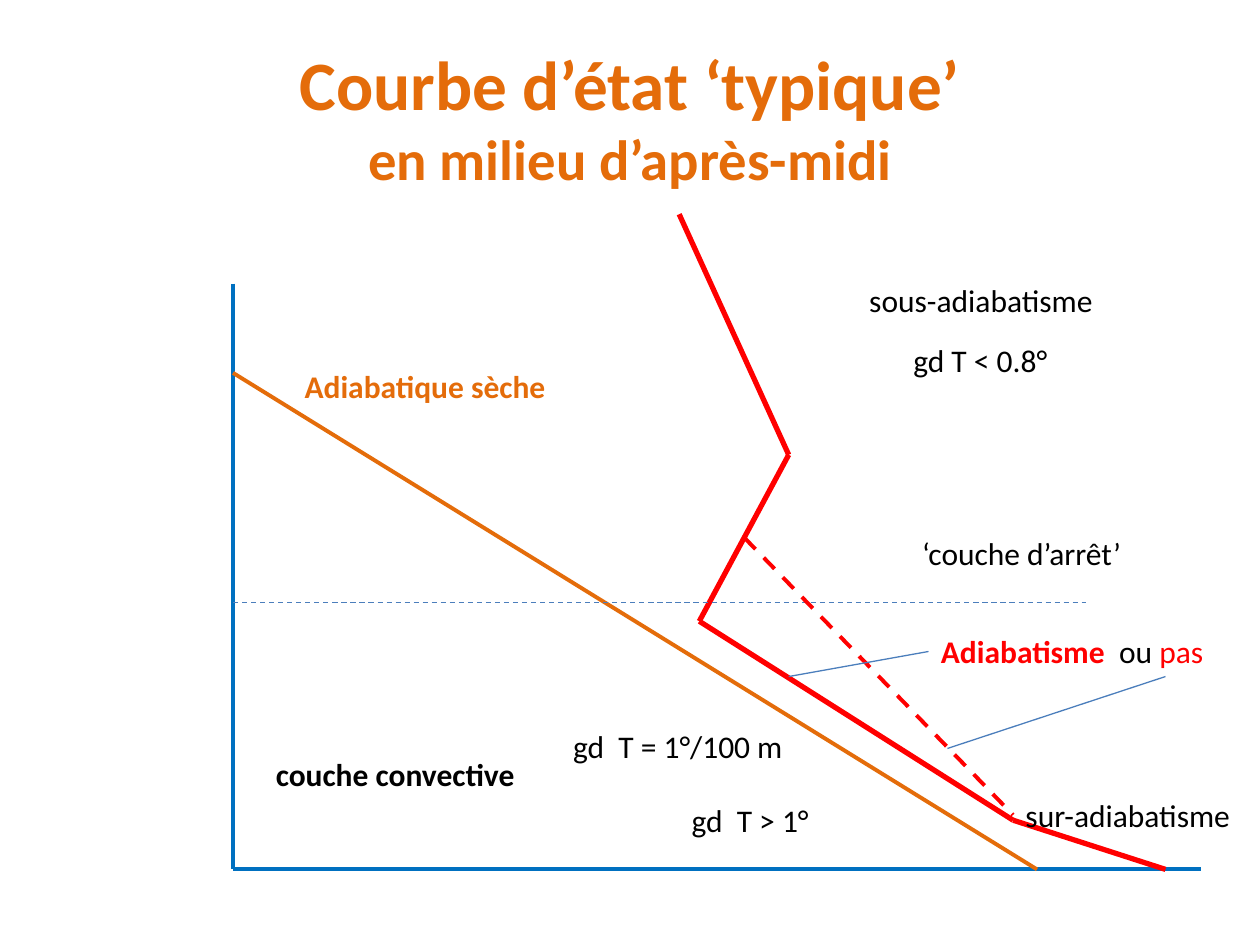
from pptx import Presentation
from pptx.dml.color import RGBColor
from pptx.enum.dml import MSO_LINE
from pptx.enum.shapes import MSO_CONNECTOR
from pptx.enum.text import MSO_ANCHOR, MSO_AUTO_SIZE as AutoSize, PP_ALIGN
from pptx.util import Pt
from lxml.etree import SubElement
from pptx.oxml.ns import qn

COLOURS = {"orange": "E46C0A", "red": "FF0000", "axis": "0070C0",
           "guide": "4B7EBC", "black": "000000"}


def add_span(para, text, size, colour, bold):
    span = para.add_run()
    span.text = text
    for name, value in {"name": "Calibri", "size": Pt(size), "bold": bold}.items():
        setattr(span.font, name, value)
    span.font.color.rgb = RGBColor.from_string(COLOURS[colour])


def add_line(start, end, colour, width, dashed=False):
    line = page.shapes.add_connector(
        MSO_CONNECTOR.STRAIGHT, *(Pt(value) for value in start + end))
    line.line.color.rgb = RGBColor.from_string(COLOURS[colour])
    line.line.width = Pt(width)
    if dashed:
        line.line.dash_style = MSO_LINE.DASH
    SubElement(line._element.spPr, qn("a:effectLst"))
    return line


deck = Presentation()
deck.slide_width, deck.slide_height = Pt(720), Pt(540)
page = deck.slides.add_slide(deck.slide_layouts[5])

# Title
title = page.shapes.title
title.left, title.top, title.width, title.height = Pt(36), Pt(21.6), Pt(648), Pt(90)
frame = title.text_frame
frame.auto_size = AutoSize.NONE
frame.vertical_anchor = MSO_ANCHOR.MIDDLE
para = frame.paragraphs[0]
para.alignment = PP_ALIGN.CENTER
add_span(para, "Courbe d’état ‘typique’", 39.6, "orange", True)
para.add_line_break()
add_span(para, "en milieu d’après-midi", 32.4, "orange", True)

# Axes and dry adiabat
origin = (133.2, 496.8)
add_line((133.2, 162), origin, "axis", 2.25)
add_line(origin, (686.2, 496.8), "axis", 2.25)
add_line((133.2, 213.1), (592.6, 496.8), "orange", 2.25)

# State curve, from the ground up
state_curve = [(666, 496.8), (578.9, 468.7), (399.6, 355), (450.7, 259.9), (388.1, 122.4)]
for lower, upper in zip(state_curve, state_curve[1:]):
    add_line(upper, lower, "red", 3)

# Top of the convective layer
add_line((133.2, 344.2), (620.6, 344.2), "guide", 0.75, dashed=True)

# Labels: left, top, width, spans of (text, colour, bold)
labels = {
    "inversion": (519.8, 301.7, 128.2, [("‘couche d’arrêt’", "black", False)]),
    "adiabatic": (530.6, 357.8, 166.3, [("Adiabatisme ", "red", True),
                                        (" ou ", "black", False),
                                        ("pas", "red", False)]),
    "super": (578.9, 451.2, 133.2, [("sur-adiabatisme", "black", False)]),
    "sub gradient": (514.8, 191.5, 92.2, [("gd T < 0.8°", "black", False)]),
    "dry gradient": (320.4, 411.8, 136.1, [("gd  T = 1°/100 m", "black", False)]),
    "super gradient": (388.1, 454.3, 82.8, [("gd  T > 1°", "black", False)]),
    "convective": (150.5, 427.7, 151.9, [("couche convective", "black", True)]),
    "sub": (489.6, 157, 143.3, [("sous-adiabatisme", "black", False)]),
    "dry adiabat": (167, 205.9, 153.4, [("Adiabatique sèche", "orange", True)]),
}
boxes = {}
for name, (left, top, width, spans) in labels.items():
    box = page.shapes.add_textbox(Pt(left), Pt(top), Pt(width), Pt(29))
    box.text_frame.word_wrap = False
    box.text_frame.auto_size = AutoSize.SHAPE_TO_FIT_TEXT
    for text, colour, bold in spans:
        add_span(box.text_frame.paragraphs[0], text, 18, colour, bold)
    boxes[name] = box

# Alternative curve and pointers
alternative = add_line((425.5, 307.4), (578.9, 465.7), "red", 2.25, dashed=True)
alternative.end_connect(boxes["super"], 1)
pointer = add_line((450.7, 386.6), (530.6, 372.3), "guide", 0.75)
pointer.end_connect(boxes["adiabatic"], 1)
add_line((666, 386.6), (541.4, 427.7), "guide", 0.75)

deck.save("out.pptx")
